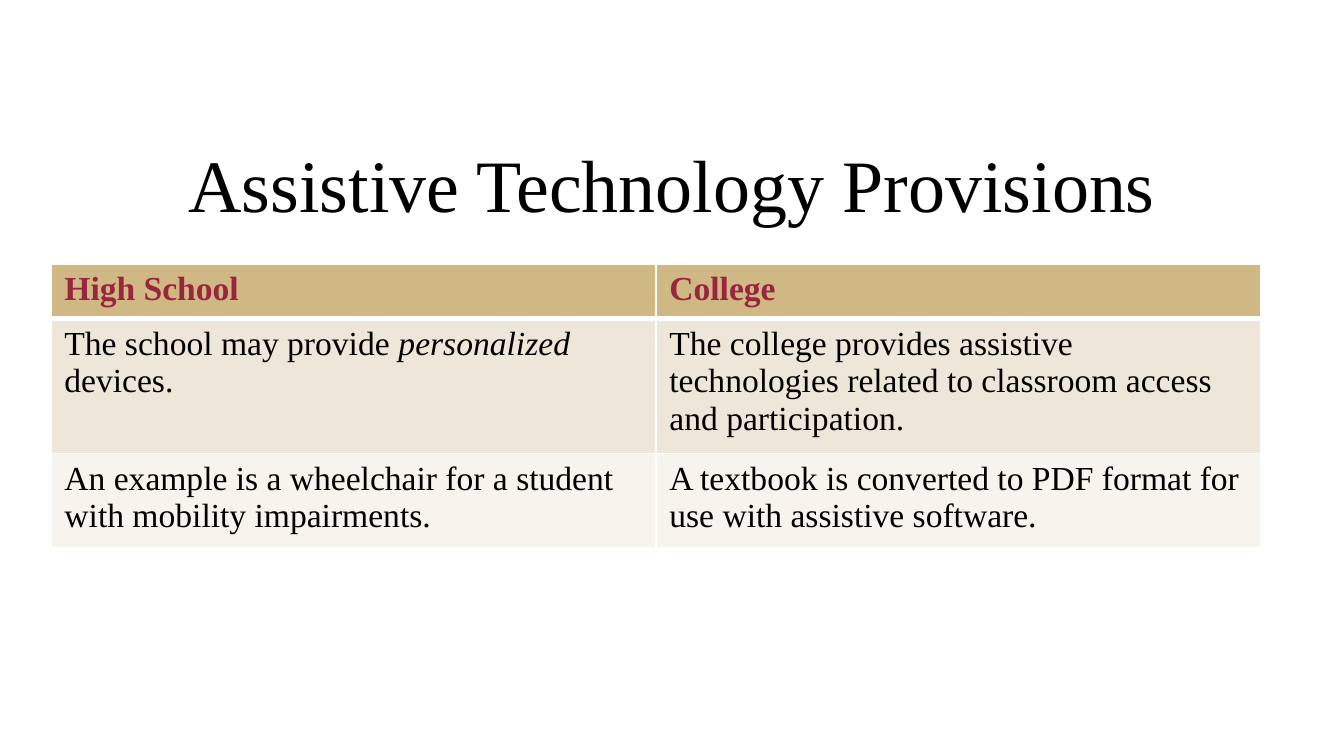
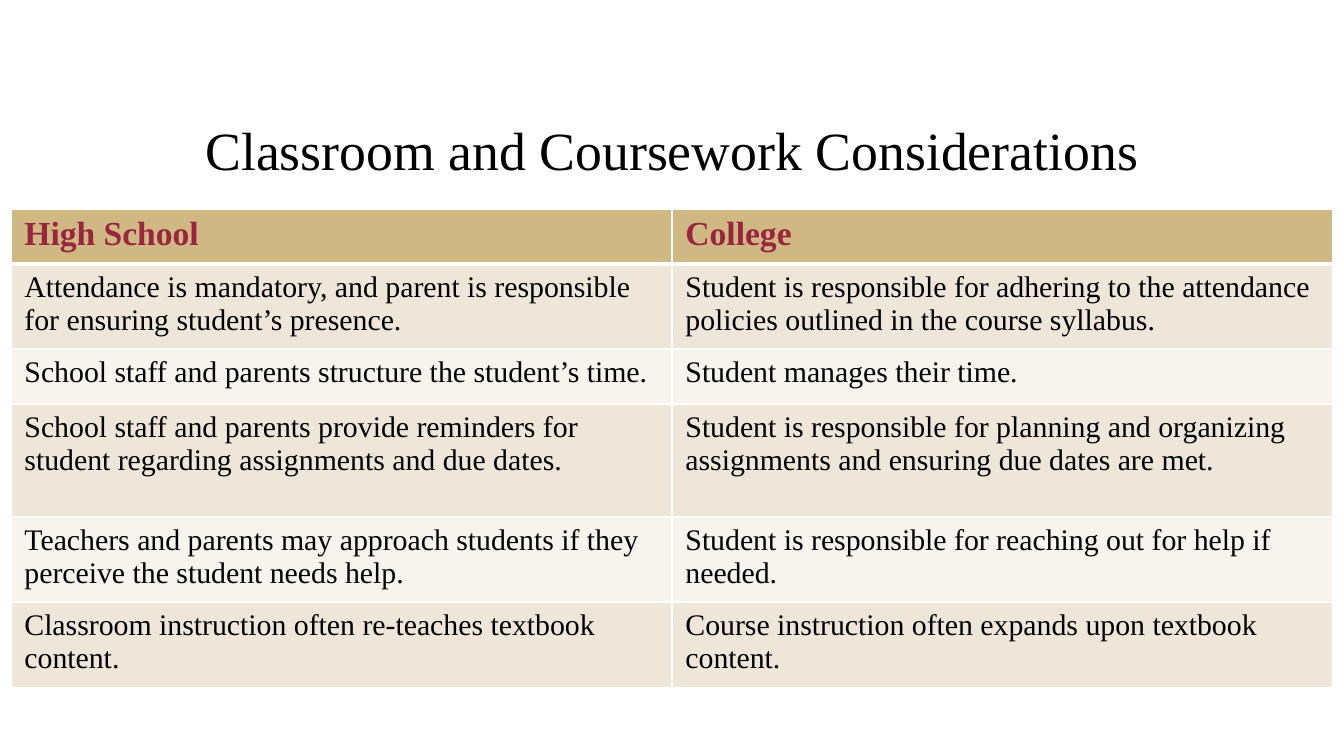
"""Build two slides that compare high school and college support."""
from lxml import etree
from pptx import Presentation
from pptx.dml.color import RGBColor
from pptx.enum.text import MSO_ANCHOR, PP_ALIGN
from pptx.oxml.ns import qn
from pptx.util import Pt

MIDDLE = MSO_ANCHOR.MIDDLE
LEFT, CENTER = PP_ALIGN.LEFT, PP_ALIGN.CENTER
PX = 914400 / 134.4
FONT = "Times New Roman"
BLACK, WHITE, GARNET, GOLD = "000000", "FFFFFF", "99263E", "D0B884"
BANDS = ["F7F3ED", "EEE6D9"]
HEADINGS = ("High School", "College")
THIN, THICK = 1, 3


def px(length):
    return round(length * PX)


def write(frame, text, size=18, color=BLACK, bold=False, align=LEFT):
    frame.word_wrap = True
    paragraph = frame.paragraphs[0]
    paragraph.alignment = align
    for index, part in enumerate(text.split("*")):
        run = paragraph.add_run()
        run.text = part
        run.font.name = FONT
        run.font.size = Pt(size)
        run.font.bold = bold
        run.font.italic = index % 2 == 1
        run.font.color.rgb = RGBColor.from_string(color)


comparisons = [
    {
        "title": "Assistive Technology Provisions",
        "title_size": 39.6, "title_top": 129, "title_height": 108,
        "left": 51, "top": 264, "column": 605, "body_size": 18,
        "heights": [55, 124, 88],
        "rows": [
            ("The school may provide *personalized* devices.",
             "The college provides assistive technologies related to classroom access and participation."),
            ("An example is a wheelchair for a student with mobility impairments.",
             "A textbook is converted to PDF format for use with assistive software."),
        ],
    },
    {
        "title": "Classroom and Coursework Considerations",
        "title_size": 28.8, "title_top": 112, "title_height": 74,
        "left": 11, "top": 209, "column": 661, "body_size": 16,
        "heights": [55, 80, 55, 113, 79, 79],
        "rows": [
            ("Attendance is mandatory, and parent is responsible for ensuring student’s presence.",
             "Student is responsible for adhering to the attendance policies outlined in the course syllabus."),
            ("School staff and parents structure the student’s time.",
             "Student manages their time."),
            ("School staff and parents provide reminders for student regarding assignments and due dates.",
             "Student is responsible for planning and organizing assignments and ensuring due dates are met."),
            ("Teachers and parents may approach students if they perceive the student needs help.",
             "Student is responsible for reaching out for help if needed."),
            ("Classroom instruction often re-teaches textbook content.",
             "Course instruction often expands upon textbook content."),
        ],
    },
]

deck = Presentation()
deck.slide_width, deck.slide_height = px(1344), px(756)

for comparison in comparisons:
    slide = deck.slides.add_slide(deck.slide_layouts[6])
    title = slide.shapes.add_textbox(
        px(67), px(comparison["title_top"]), px(1210), px(comparison["title_height"])
    ).text_frame
    title.vertical_anchor = MIDDLE
    write(title, comparison["title"], size=comparison["title_size"], align=CENTER)

    rows = [HEADINGS] + comparison["rows"]
    heights = comparison["heights"]
    table = slide.shapes.add_table(
        len(rows), len(HEADINGS), px(comparison["left"]), px(comparison["top"]),
        px(comparison["column"] * len(HEADINGS)), px(sum(heights))
    ).table
    for column in table.columns:
        column.width = px(comparison["column"])

    for row_index, texts in enumerate(rows):
        table.rows[row_index].height = px(heights[row_index])
        is_header = row_index == 0
        for column_index, text in enumerate(texts):
            cell = table.cell(row_index, column_index)
            edges = {
                "a:lnL": THIN, "a:lnR": THIN,
                "a:lnT": THICK if row_index == 1 else THIN,
                "a:lnB": THICK if is_header else THIN,
            }
            properties = cell._tc.get_or_add_tcPr()
            for edge, width in edges.items():
                line = etree.SubElement(properties, qn(edge), w=str(Pt(width)))
                paint = etree.SubElement(line, qn("a:solidFill"))
                etree.SubElement(paint, qn("a:srgbClr"), val=WHITE)
            cell.fill.solid()
            cell.fill.fore_color.rgb = RGBColor.from_string(
                GOLD if is_header else BANDS[row_index % 2])
            if is_header:
                write(cell.text_frame, text, color=GARNET, bold=True)
            else:
                write(cell.text_frame, text, size=comparison["body_size"])

deck.save("out.pptx")
